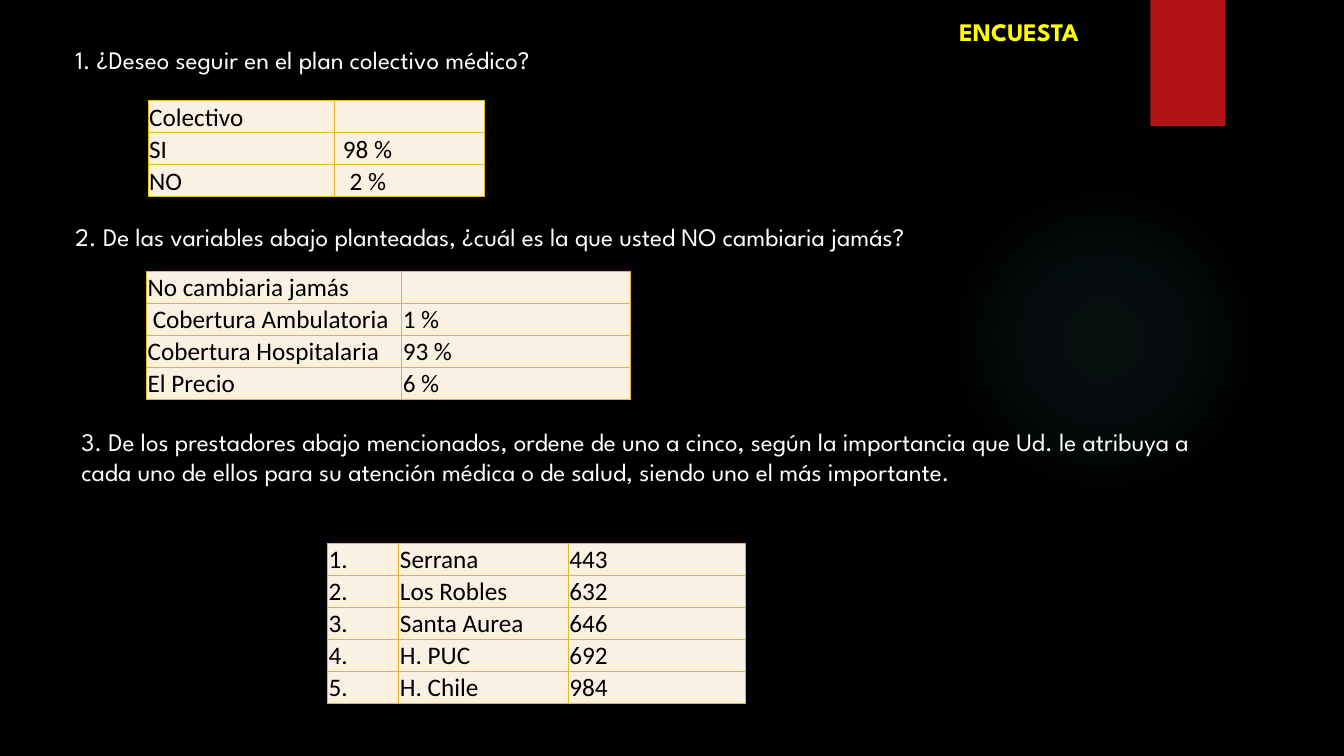
from pptx import Presentation
from pptx.dml.color import RGBColor
from pptx.enum.shapes import MSO_SHAPE as Shape
from pptx.enum.text import MSO_ANCHOR as Anchor, PP_ALIGN as Align
from pptx.oxml import parse_xml
from pptx.oxml.ns import nsdecls
from pptx.util import Cm, Pt

BLACK = RGBColor(0x00, 0x00, 0x00)
WHITE = RGBColor(0xFF, 0xFF, 0xFF)
YELLOW = RGBColor(0xFF, 0xFF, 0x00)
RED = RGBColor(0xB0, 0x15, 0x13)
TEAL = RGBColor(0x50, 0xB9, 0xC1)
GOLD = RGBColor(0xE6, 0xB7, 0x29)
CREAM = RGBColor(0xFB, 0xF1, 0xE3)
CELL_INSET = 0.03


class SurveySlide:
    font_name = "League Spartan"

    def __init__(self, presentation):
        self.slide = presentation.slides.add_slide(presentation.slide_layouts[6])
        fill = self.slide.background.fill
        fill.solid()
        fill.fore_color.rgb = BLACK

    def style(self, paragraph, size, color, bold):
        font = paragraph.font
        font.name = self.font_name
        font.size = Pt(size)
        font.color.rgb = color
        font.bold = bold

    def shape(self, kind, left, top, width, height, color):
        shape = self.slide.shapes.add_shape(
            kind, Cm(left), Cm(top), Cm(width), Cm(height))
        shape.shadow.inherit = False
        shape.fill.solid()
        shape.fill.fore_color.rgb = color
        shape.line.fill.background()
        return shape

    def glow(self, left, top, size, color, stops):
        """Circle fading outwards; stops are (position, opacity) in percent."""
        shape = self.shape(Shape.OVAL, left, top, size, size, color)
        stop_xml = "".join(
            f'<a:gs pos="{position * 1000}"><a:srgbClr val="{color}">'
            f'<a:alpha val="{opacity * 1000}"/></a:srgbClr></a:gs>'
            for position, opacity in stops)
        gradient = parse_xml(
            f'<a:gradFill {nsdecls("a")}><a:gsLst>{stop_xml}</a:gsLst>'
            '<a:path path="circle"><a:fillToRect l="50000" t="50000" '
            'r="50000" b="50000"/></a:path></a:gradFill>')
        properties = shape.fill._xPr
        properties.replace(properties.solidFill, gradient)

    def text(self, text, left, top, width, height, color=WHITE, bold=False, wrap=True):
        box = self.slide.shapes.add_textbox(Cm(left), Cm(top), Cm(width), Cm(height))
        frame = box.text_frame
        frame.word_wrap = wrap
        frame.text = text
        self.style(frame.paragraphs[0], 18, color, bold)

    def border(self, cell):
        properties = cell._tc.get_or_add_tcPr()
        for index, side in enumerate(("lnL", "lnR", "lnT", "lnB")):
            properties.insert(index, parse_xml(
                f'<a:{side} {nsdecls("a")} w="{Pt(0.75)}"><a:solidFill>'
                f'<a:srgbClr val="{GOLD}"/></a:solidFill></a:{side}>'))

    def table(self, rows, left, top, widths, heights, size, anchor, insets=None):
        """Last column is right-aligned; insets maps (row, column) to a side margin."""
        insets = insets or {}
        table = self.slide.shapes.add_table(
            len(rows), len(widths), Cm(left), Cm(top),
            Cm(sum(widths)), Cm(sum(heights))).table
        table.first_row = table.horz_banding = False
        for column, width in zip(table.columns, widths):
            column.width = Cm(width)
        for row, height in zip(table.rows, heights):
            row.height = Cm(height)
        last = len(widths) - 1
        for i, values in enumerate(rows):
            for j, value in enumerate(values):
                cell = table.cell(i, j)
                cell.fill.solid()
                cell.fill.fore_color.rgb = CREAM
                self.border(cell)
                cell.vertical_anchor = anchor
                cell.margin_left = cell.margin_right = Cm(insets.get((i, j), CELL_INSET))
                cell.margin_top, cell.margin_bottom = Cm(CELL_INSET), 0
                paragraph = cell.text_frame.paragraphs[0]
                if value:
                    cell.text = value
                paragraph.alignment = Align.RIGHT if j == last else Align.LEFT
                self.style(paragraph, size, BLACK, True)


def main():
    presentation = Presentation()
    presentation.slide_width, presentation.slide_height = Cm(33.87), Cm(19.05)
    survey = SurveySlide(presentation)

    survey.glow(23.9, 4.65, 7.82, TEAL, [(0, 7), (36, 6), (69, 0)])
    survey.shape(Shape.RECTANGLE, 28.99, 0, 1.9, 3.18, RED)

    survey.table(
        [("Colectivo", ""), ("SI", "98 %"), ("NO", "2 %")],
        3.73, 2.54, [4.71, 3.77], [0.79] * 3, 18, Anchor.BOTTOM,
        {(1, 1): 0.2, (2, 1): 0.37})
    survey.table(
        [("No cambiaria jamás", ""), ("Cobertura Ambulatoria", "1 %"),
         ("Cobertura Hospitalaria", "93 %"), ("El Precio", "6 %")],
        3.69, 6.83, [6.43, 5.77], [0.77] * 4, 14, Anchor.BOTTOM,
        {(1, 0): 0.16})
    providers = [("Serrana", "443"), ("Los Robles", "632"), ("Santa Aurea", "646"),
                 ("H. PUC", "692"), ("H. Chile", "984")]
    survey.table(
        [(f"{rank}.", *provider) for rank, provider in enumerate(providers, 1)],
        8.25, 13.69, [1.8, 4.27, 4.47], [0.61] + [0.76] * 4, 14, Anchor.MIDDLE)

    survey.text("1. ¿Deseo seguir en el plan colectivo médico?",
                1.65, 0.99, 14.94, 1.02, wrap=False)
    survey.text("2. De las variables abajo planteadas, ¿cuál es la que usted NO "
                "cambiaria jamás?", 1.65, 5.44, 26.42, 1.02)
    survey.text("3. De los prestadores abajo mencionados, ordene de uno a cinco, según "
                "la importancia que Ud. le atribuya a cada uno de ellos para su atención "
                "médica o de salud, siendo uno el más importante.",
                1.8, 10.62, 29.57, 2.57)
    survey.text("ENCUESTA", 23.93, 0.28, 7.7, 1.02, YELLOW, bold=True)

    presentation.save("out.pptx")


if __name__ == "__main__":
    main()
